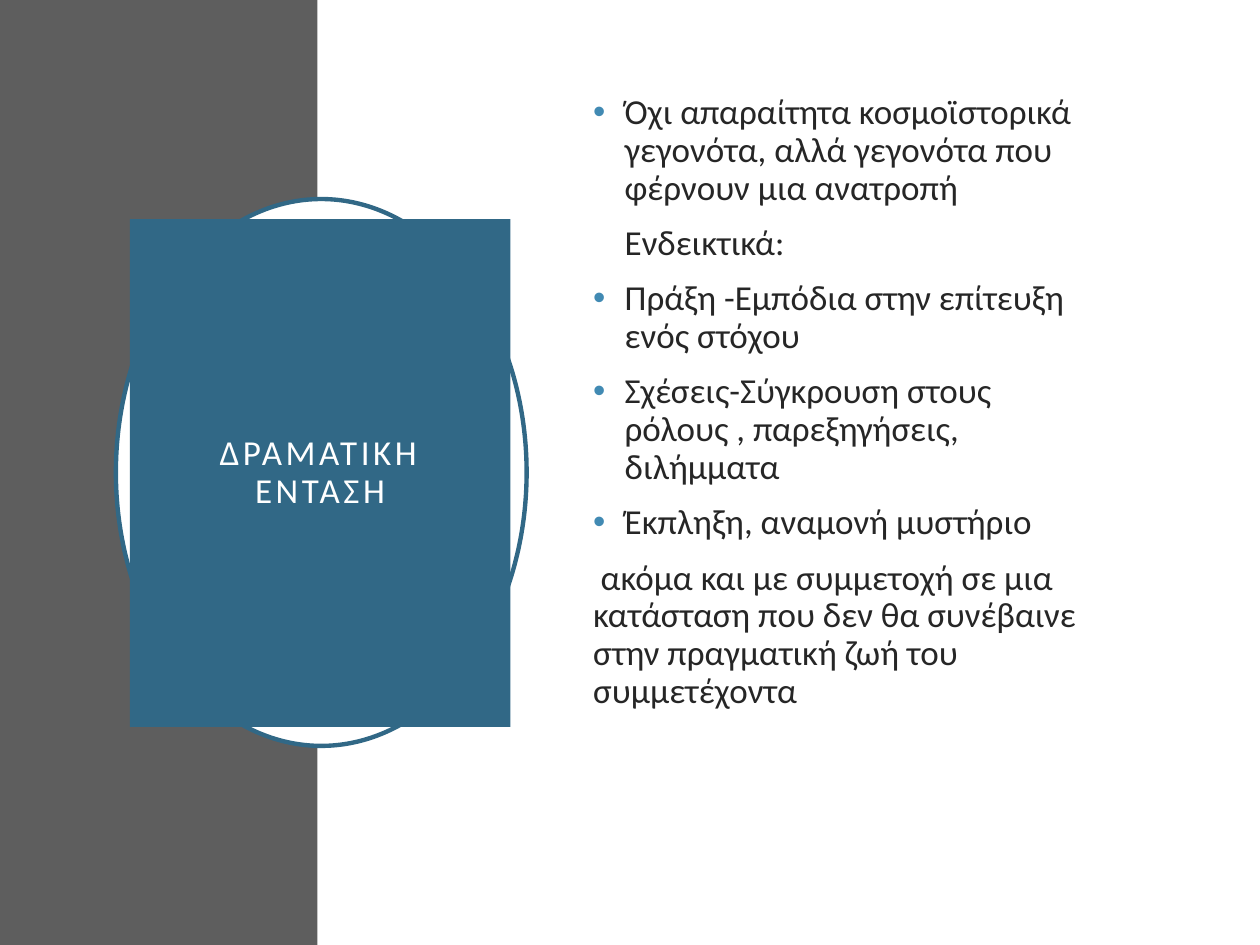
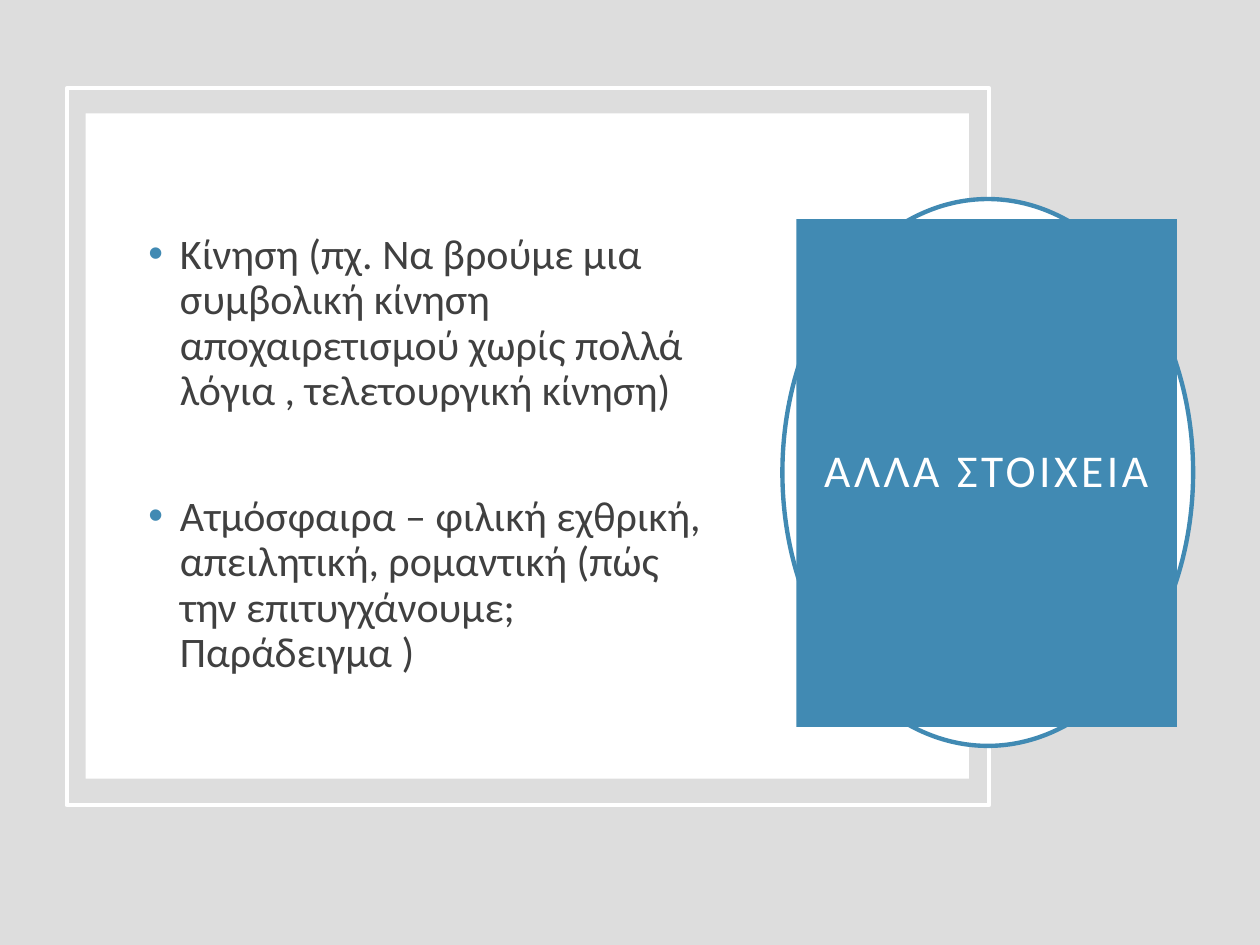
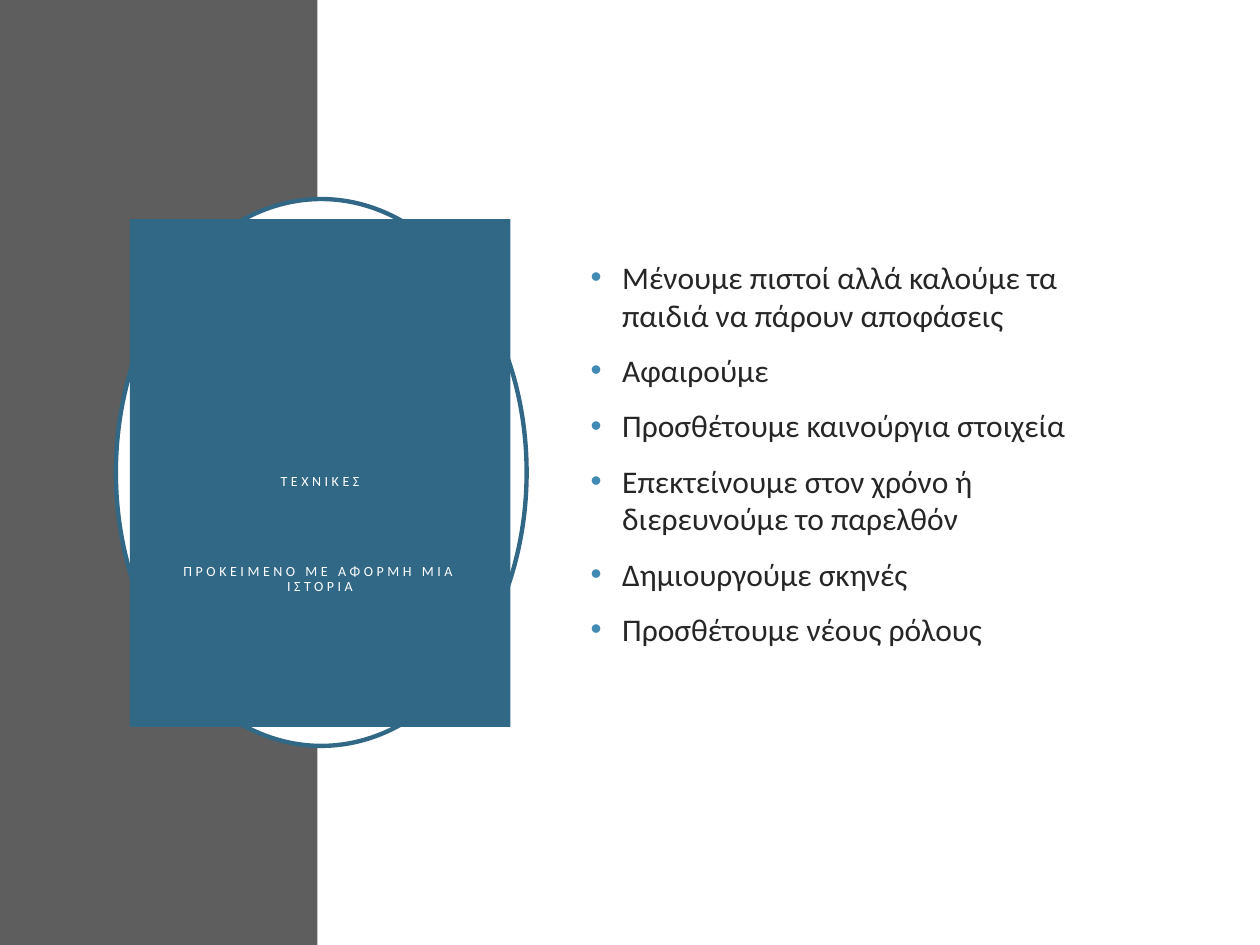
from dataclasses import dataclass

from lxml import etree
from pptx import Presentation
from pptx.dml.color import RGBColor
from pptx.enum.shapes import MSO_SHAPE
from pptx.enum.text import MSO_ANCHOR, PP_ALIGN
from pptx.oxml.ns import qn
from pptx.util import Inches, Pt

RECT = MSO_SHAPE.RECTANGLE
OVAL = MSO_SHAPE.OVAL
MIDDLE = MSO_ANCHOR.MIDDLE
CENTER = PP_ALIGN.CENTER


@dataclass(frozen=True)
class Theme:
    """Colours, type sizes and spacing that the slides share."""
    font: str = "Calibri"
    white: str = "FFFFFF"
    grey: str = "DDDDDD"
    band: str = "5E5E5E"
    blue: str = "418AB3"
    deep: str = "316886"
    ink: str = "262626"
    soft: str = "404040"
    small: int = 8
    text: int = 18
    large: int = 20
    wide: int = 24
    head: int = 26
    gap: int = 10
    edge: float = 2.5
    tight: float = 0.9
    hang: float = 0.25


@dataclass(frozen=True)
class Item:
    """A body paragraph with its bullet, indents and space before."""
    text: str
    bullet: bool = True
    left: float = 0.25
    first: float = -0.25
    gap: int = 10


THEME = Theme()


def rgb(color):
    """Turn a hex string into a colour."""
    return RGBColor.from_string(color)


def add_slide(deck, color):
    """Add a blank slide with a plain background."""
    slide = deck.slides.add_slide(deck.slide_layouts[6])
    slide.background.fill.solid()
    slide.background.fill.fore_color.rgb = rgb(color)
    return slide


def add_form(slide, kind, box, fill=None, line=None):
    """Add a flat preset shape with an optional fill and line."""
    form = slide.shapes.add_shape(kind, *map(Inches, box))
    form.shadow.inherit = False
    if fill:
        form.fill.solid()
        form.fill.fore_color.rgb = rgb(fill)
    else:
        form.fill.background()
    if line:
        form.line.color.rgb = rgb(line)
        form.line.width = Pt(THEME.edge)
    else:
        form.line.fill.background()
    return form


def style(para, size, color, space):
    """Set the font and line spacing of a paragraph."""
    para.line_spacing = space
    para.font.name = THEME.font
    para.font.size = Pt(size)
    para.font.color.rgb = rgb(color)


def add_title(slide, left, color, lines, size, gap=0, drop=0):
    """Add the title block with the ringed oval behind it."""
    add_form(slide, OVAL, (left, 1.58, 3.26, 4.34), THEME.white, color)
    block = add_form(slide, RECT, (left + 0.11, 1.74, 3.02, 4.03), color)
    frame = block.text_frame
    frame.word_wrap = True
    frame.vertical_anchor = MIDDLE
    frame.margin_left = frame.margin_right = frame.margin_bottom = Inches(0.2)
    frame.margin_top = Inches(0.2 + drop)
    for index, line in enumerate(lines):
        para = frame.add_paragraph() if index else frame.paragraphs[0]
        para.alignment = CENTER
        if index:
            para.space_before = Pt(gap)
        run = para.add_run()
        run.text = line
        style(para, size, THEME.white, THEME.tight)
        run.font._element.set("spc", "200")


def set_bullet(para, item):
    """Set the indents of a paragraph and its bullet, if any."""
    props = para._p.get_or_add_pPr()
    props.set("marL", str(Inches(item.left)))
    props.set("indent", str(Inches(item.first)))
    if item.bullet:
        tint = etree.SubElement(props, qn("a:buClr"))
        etree.SubElement(tint, qn("a:srgbClr"), val=THEME.blue)
        etree.SubElement(props, qn("a:buFont"), typeface="Arial")
        etree.SubElement(props, qn("a:buChar"), char="•")
    else:
        etree.SubElement(props, qn("a:buNone"))


def add_body(slide, box, items, size, color, space):
    """Add the body text, centred in its height."""
    frame = slide.shapes.add_textbox(*map(Inches, box)).text_frame
    frame.word_wrap = True
    frame.vertical_anchor = MIDDLE
    for index, item in enumerate(items):
        para = frame.add_paragraph() if index else frame.paragraphs[0]
        para.text = item.text
        set_bullet(para, item)
        if index:
            para.space_before = Pt(item.gap)
        style(para, size, color, space)


def add_split(deck):
    """Add a white slide with the dark band on its left."""
    slide = add_slide(deck, THEME.white)
    add_form(slide, RECT, (0, 0, 2.52, 7.5), THEME.band)
    return slide


def add_tension(deck):
    """Add the slide on dramatic tension."""
    slide = add_split(deck)
    add_title(slide, 0.92, THEME.deep, ["ΔΡΑΜΑΤΙΚΗ ΕΝΤΑΣΗ"], THEME.large)
    items = [
        Item("Όχι απαραίτητα κοσμοϊστορικά γεγονότα, αλλά γεγονότα που "
             "φέρνουν μια ανατροπή"),
        Item("Ενδεικτικά:", bullet=False, first=0),
        Item("Πράξη -Εμπόδια στην επίτευξη ενός στόχου"),
        Item("Σχέσεις-Σύγκρουση στους ρόλους , παρεξηγήσεις, διλήμματα"),
        Item("Έκπληξη, αναμονή μυστήριο"),
        Item("ακόμα και με συμμετοχή σε μια κατάσταση που δεν θα συνέβαινε "
             "στην πραγματική ζωή του συμμετέχοντα",
             bullet=False, left=0, first=0.06),
    ]
    add_body(slide, (4.61, 0.55, 4.34, 5.29), items,
             THEME.large, THEME.ink, THEME.tight)


def add_others(deck):
    """Add the framed slide on other elements."""
    slide = add_slide(deck, THEME.grey)
    add_form(slide, RECT, (0.53, 0.7, 7.32, 5.69), line=THEME.white)
    add_form(slide, RECT, (0.68, 0.9, 7.01, 5.28), THEME.white)
    add_title(slide, 6.21, THEME.blue, ["ΑΛΛΑ ΣΤΟΙΧΕΙΑ"], THEME.head)
    items = [
        Item("Κίνηση (πχ. Να βρούμε μια συμβολική κίνηση αποχαιρετισμού "
             "χωρίς πολλά λόγια , τελετουργική κίνηση)"),
        Item("Ατμόσφαιρα – φιλική εχθρική, απειλητική, ρομαντική (πώς την "
             "επιτυγχάνουμε; Παράδειγμα )", gap=46),
    ]
    add_body(slide, (1.08, 1.47, 4.69, 4.28), items,
             THEME.wide, THEME.soft, THEME.tight)


def add_methods(deck):
    """Add the slide on techniques."""
    slide = add_split(deck)
    lines = ["ΤΕΧΝΙΚΕΣ", "ΠΡΟΚΕΙΜΕΝΟ ΜΕ ΑΦΟΡΜΗ ΜΙΑ ΙΣΤΟΡΙΑ"]
    add_title(slide, 0.92, THEME.deep, lines, THEME.small, gap=43, drop=0.97)
    texts = [
        "Μένουμε πιστοί αλλά καλούμε τα παιδιά να πάρουν αποφάσεις",
        "Αφαιρούμε",
        "Προσθέτουμε καινούργια στοιχεία",
        "Επεκτείνουμε στον χρόνο ή διερευνούμε το παρελθόν",
        "Δημιουργούμε σκηνές",
        "Προσθέτουμε νέους ρόλους",
    ]
    add_body(slide, (4.59, 1.38, 4.36, 4.43), map(Item, texts),
             THEME.text, THEME.ink, 1.0)


def main():
    """Build the deck and save it."""
    deck = Presentation()
    deck.slide_width = Inches(10)
    deck.slide_height = Inches(7.5)
    add_tension(deck)
    add_others(deck)
    add_methods(deck)
    deck.save("out.pptx")


if __name__ == "__main__":
    main()
